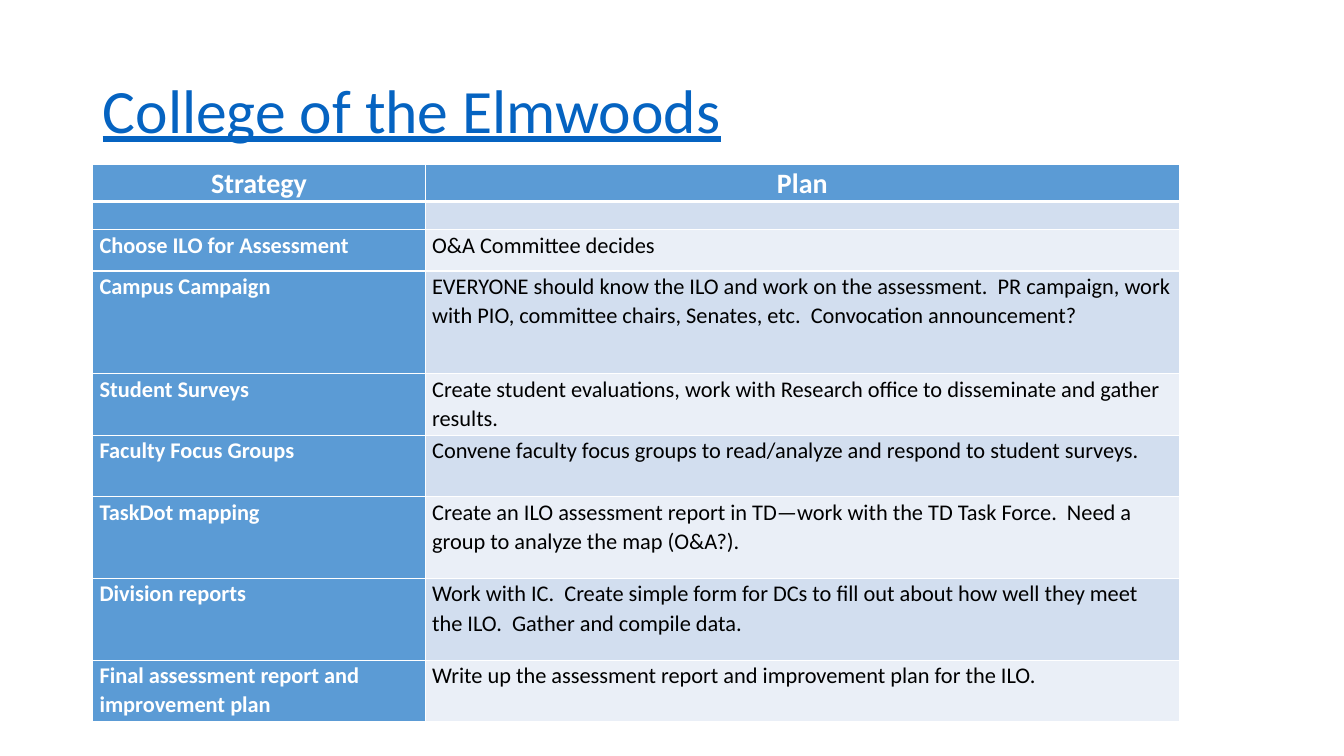
from dataclasses import dataclass

from lxml.etree import SubElement
from pptx import Presentation
from pptx.dml.color import RGBColor
from pptx.enum.text import MSO_ANCHOR, PP_ALIGN
from pptx.oxml.ns import qn
from pptx.slide import Slide
from pptx.table import _Cell
from pptx.util import Cm, Pt


@dataclass(frozen=True)
class Theme:
    font: str = "Calibri"
    link: str = "0563C1"
    accent: str = "5B9BD5"
    bands: tuple[str, str] = ("D2DEEF", "EAEFF7")
    light: str = "FFFFFF"
    dark: str = "000000"
    title_size: int = 44
    header_size: int = 20
    body_size: int = 16
    spacer_size: int = 14
    thin_line: int = 1
    thick_line: int = 3


@dataclass(frozen=True)
class PlanRow:
    strategy: str
    plan: str
    height: float


THEME = Theme()
COLUMN_WIDTHS = (8.38, 19.0)
ROWS = (
    PlanRow("Strategy", "Plan", 0.93),
    PlanRow("", "", 0.71),
    PlanRow("Choose ILO for Assessment", "O&A Committee decides", 1.04),
    PlanRow("Campus Campaign",
            "EVERYONE should know the ILO and work on the assessment.  PR campaign, work "
            "with PIO, committee chairs, Senates, etc.  Convocation announcement?", 2.59),
    PlanRow("Student Surveys",
            "Create student evaluations, work with Research office to disseminate and "
            "gather results.", 1.55),
    PlanRow("Faculty Focus Groups",
            "Convene faculty focus groups to read/analyze and respond to student surveys.",
            1.55),
    PlanRow("TaskDot mapping",
            "Create an ILO assessment report in TD—work with the TD Task Force.  Need a "
            "group to analyze the map (O&A?).", 2.06),
    PlanRow("Division reports",
            "Work with IC.  Create simple form for DCs to fill out about how well they "
            "meet the ILO.  Gather and compile data.", 2.06),
    PlanRow("Final assessment report and improvement plan",
            "Write up the assessment report and improvement plan for the ILO.", 1.55),
)


def add_title(slide: Slide, text: str) -> None:
    shape = slide.shapes.add_textbox(Cm(2.34), Cm(1.01), Cm(29.21), Cm(3.68))
    frame = shape.text_frame
    frame.word_wrap = True
    frame.vertical_anchor = MSO_ANCHOR.MIDDLE
    paragraph = frame.paragraphs[0]
    paragraph.line_spacing = 0.9
    run = paragraph.add_run()
    run.text = text
    run.font.name = THEME.font
    run.font.size = Pt(THEME.title_size)
    run.font.underline = True
    run.font.color.rgb = RGBColor.from_string(THEME.link)


def set_borders(cell: _Cell, row_index: int) -> None:
    """Draw white cell edges, with a heavy rule below the header."""
    properties = cell._tc.get_or_add_tcPr()
    heavy_edge = {0: "lnB", 1: "lnT"}.get(row_index)
    for edge in ("lnL", "lnR", "lnT", "lnB"):
        points = THEME.thick_line if edge == heavy_edge else THEME.thin_line
        line = SubElement(properties, qn(f"a:{edge}"), w=str(Pt(points)))
        fill = SubElement(line, qn("a:solidFill"))
        SubElement(fill, qn("a:srgbClr"), val=THEME.light)


def fill_cell(cell: _Cell, text: str, row_index: int, column_index: int) -> None:
    is_header = row_index == 0
    is_accent = is_header or column_index == 0
    set_borders(cell, row_index)
    cell.fill.solid()
    background = THEME.accent if is_accent else THEME.bands[(row_index - 1) % 2]
    cell.fill.fore_color.rgb = RGBColor.from_string(background)
    cell.margin_left = cell.margin_right = Cm(0.17)
    cell.margin_top = cell.margin_bottom = 0

    paragraph = cell.text_frame.paragraphs[0]
    if not text:
        # Keep the empty row as low as its set height
        SubElement(paragraph._p, qn("a:endParaRPr"), sz=str(THEME.spacer_size * 100))
        return
    paragraph.line_spacing = 1.07
    paragraph.alignment = PP_ALIGN.CENTER if is_header else PP_ALIGN.LEFT
    run = paragraph.add_run()
    run.text = text
    run.font.name = THEME.font
    run.font.size = Pt(THEME.header_size if is_header else THEME.body_size)
    run.font.bold = is_accent
    run.font.color.rgb = RGBColor.from_string(THEME.light if is_accent else THEME.dark)


def add_plan_table(slide: Slide, rows: tuple[PlanRow, ...]) -> None:
    table = slide.shapes.add_table(
        len(rows), len(COLUMN_WIDTHS), Cm(2.34), Cm(4.15),
        Cm(sum(COLUMN_WIDTHS)), Cm(sum(row.height for row in rows)),
    ).table
    for column, width in zip(table.columns, COLUMN_WIDTHS):
        column.width = Cm(width)
    for row_index, row in enumerate(rows):
        table.rows[row_index].height = Cm(row.height)
        for column_index, text in enumerate((row.strategy, row.plan)):
            fill_cell(table.cell(row_index, column_index), text, row_index, column_index)


def main() -> None:
    presentation = Presentation()
    presentation.slide_width = Cm(33.87)
    presentation.slide_height = Cm(19.05)
    slide = presentation.slides.add_slide(presentation.slide_layouts[6])

    # Title
    add_title(slide, "College of the Elmwoods")
    # Strategy and plan table
    add_plan_table(slide, ROWS)

    presentation.save("out.pptx")


if __name__ == "__main__":
    main()
